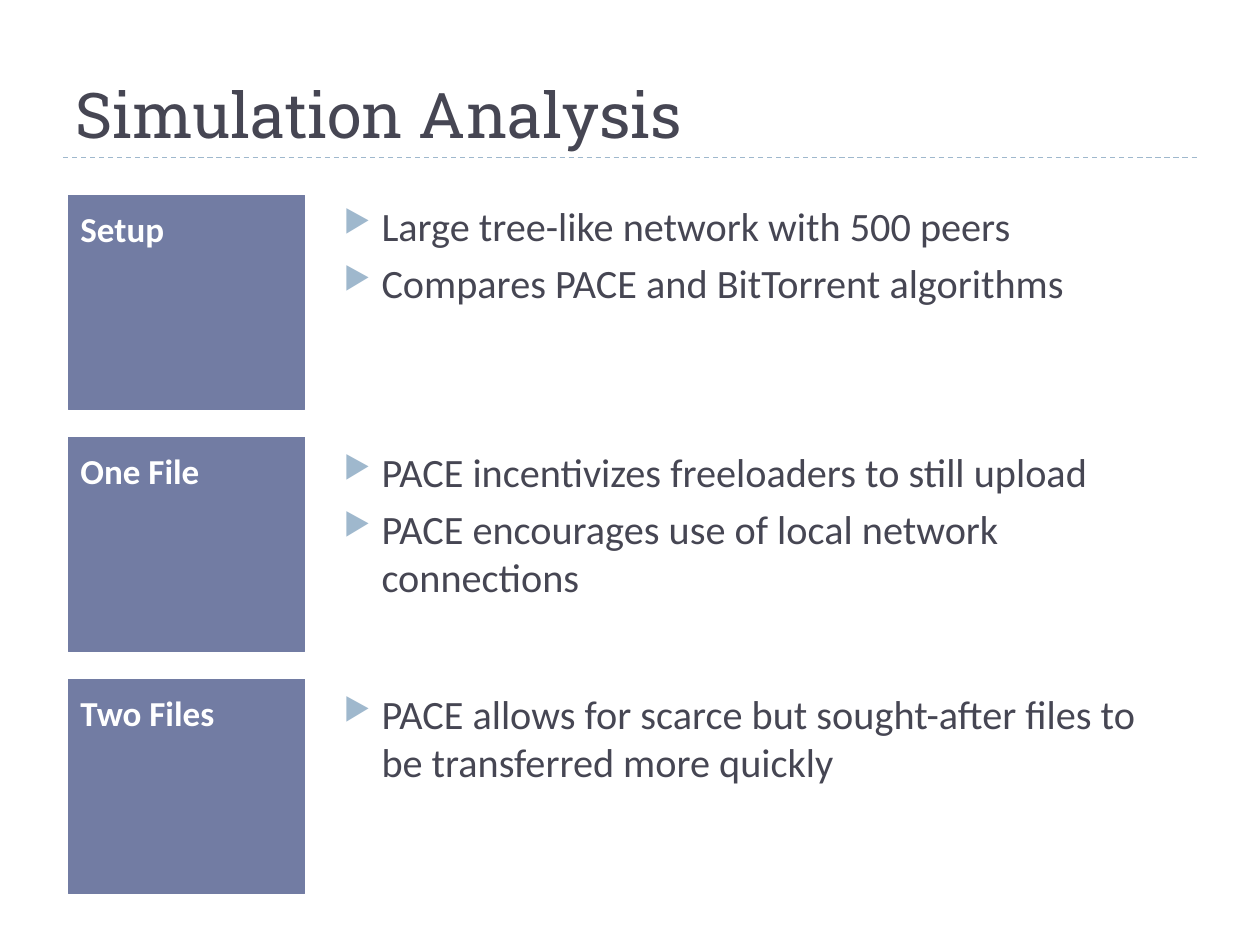
from pptx import Presentation
from pptx.dml.color import RGBColor
from pptx.enum.dml import MSO_LINE
from pptx.enum.shapes import MSO_CONNECTOR, MSO_SHAPE
from pptx.enum.text import MSO_ANCHOR, PP_ALIGN
from pptx.oxml.ns import qn
from pptx.util import Pt
from lxml.etree import SubElement

INK = RGBColor(0x46, 0x46, 0x53)
SLATE = RGBColor(0x72, 0x7C, 0xA3)
SKY = RGBColor(0x9F, 0xB8, 0xCD)
WHITE = RGBColor(0xFF, 0xFF, 0xFF)
SCALE = 9144
TOP, PITCH = 155, 192

ROWS = [
    ("Setup", (233, 155, 683, 95), [
        "Large tree-like network with 500 peers",
        "Compares PACE and BitTorrent algorithms"]),
    ("One File", (233, 350, 717, 158), [
        "PACE incentivizes freeloaders to still upload",
        "PACE encourages use of local network connections"]),
    ("Two Files", (233, 542, 717, 192), [
        "PACE allows for scarce but sought-after files to be transferred more quickly"]),
]


def px(*sizes):
    return [size * SCALE for size in sizes]


class Deck:
    """Holds the style and the current slide."""

    def __init__(self, width, height):
        self.show = Presentation()
        self.show.slide_width, self.show.slide_height = px(width, height)
        self.slide = self.show.slides.add_slide(self.show.slide_layouts[6])
        self.body, self.head = "Calibri", "Roboto Slab"

    def add_text(self, para, text, size, color, font, bold=False):
        run = para.add_run()
        run.text = text
        run.font.size = Pt(size)
        run.font.name = font
        run.font.bold = bold
        run.font.color.rgb = color

    def frame(self, box):
        frame = self.slide.shapes.add_textbox(*px(*box)).text_frame
        frame.word_wrap = True
        return frame

    def title(self, box, text):
        frame = self.frame(box)
        frame.vertical_anchor = MSO_ANCHOR.BOTTOM
        self.add_text(frame.paragraphs[0], text, 36, INK, self.head)

    def rule(self, left, right, top):
        line = self.slide.shapes.add_connector(
            MSO_CONNECTOR.STRAIGHT, *px(left, top, right, top))
        line.line.color.rgb = SKY
        line.line.width = Pt(0.75)
        line.line.dash_style = MSO_LINE.DASH
        SubElement(line._element.spPr, qn("a:effectLst"))

    def label(self, box, text):
        shape = self.slide.shapes.add_shape(MSO_SHAPE.RECTANGLE, *px(*box))
        shape.shadow.inherit = False
        shape.fill.solid()
        shape.fill.fore_color.rgb = SLATE
        shape.line.color.rgb = SLATE
        shape.line.width = Pt(0.5)
        frame = shape.text_frame
        frame.word_wrap = True
        frame.vertical_anchor = MSO_ANCHOR.TOP
        frame.margin_left, frame.margin_top, frame.margin_right, frame.margin_bottom = px(10, 10, 10, 10)
        para = frame.paragraphs[0]
        para.alignment = PP_ALIGN.LEFT
        para.space_before = Pt(5)
        self.add_text(para, text, 20, WHITE, self.body, True)

    def points(self, box, items):
        frame = self.frame(box)
        for i, item in enumerate(items):
            para = frame.add_paragraph() if i else frame.paragraphs[0]
            para.level = 1
            para.space_before = Pt(5)
            self.bullet(para)
            self.add_text(para, item, 23, INK, self.body)

    def bullet(self, para):
        props = para._p.get_or_add_pPr()
        left, hang = px(60, -30)
        props.set("marL", str(left))
        props.set("indent", str(hang))
        tint = SubElement(props, qn("a:buClr"))
        SubElement(tint, qn("a:srgbClr"), val=str(SKY))
        SubElement(props, qn("a:buSzPct"), val="76000")
        SubElement(props, qn("a:buChar"), char="▶")


def main():
    deck = Deck(1000, 750)
    deck.rule(50, 950, 125)
    deck.title((50, 17, 900, 108), "Simulation Analysis")
    for i, (name, box, items) in enumerate(ROWS):
        deck.label((54, TOP + i * PITCH, 188, 170), name)
        deck.points(box, items)
    deck.show.save("out.pptx")


if __name__ == "__main__":
    main()
